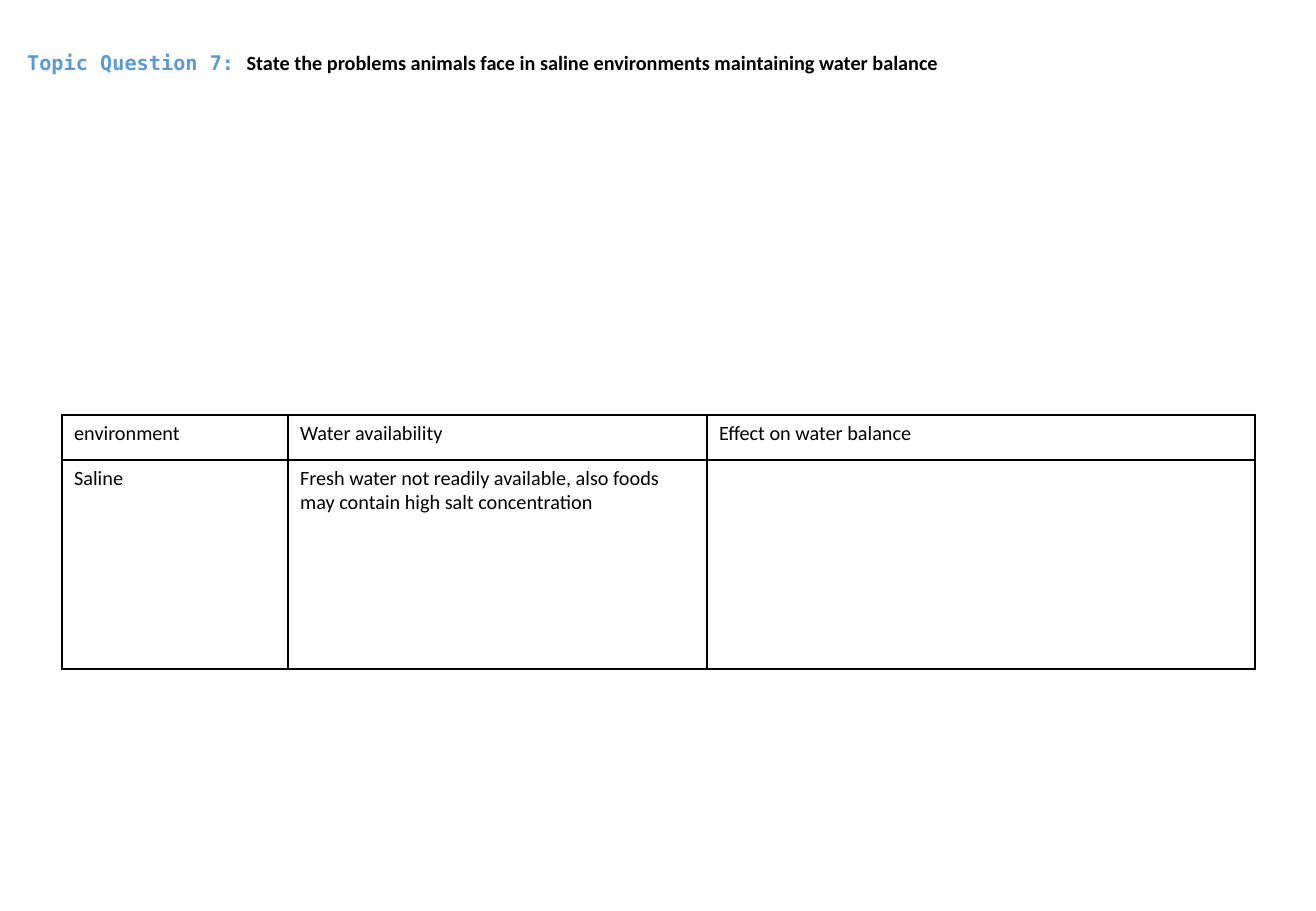
from lxml.etree import SubElement
from pptx import Presentation
from pptx.dml.color import RGBColor
from pptx.enum.text import MSO_ANCHOR, MSO_AUTO_SIZE, PP_ALIGN
from pptx.oxml.ns import qn
from pptx.util import Pt

PX = 914400 / 121.5
THEME = {
    "text": "000000",
    "accent": "5B9BD5",
    "border": "000000",
    "body_font": "Calibri",
    "label_font": "DejaVu Sans Mono",
    "size": Pt(12),
    "border_width": Pt(1),
}


def px(length):
    return round(length * PX)


def style_run(run, font_name, color, bold=False):
    run.font.name = font_name
    run.font.size = THEME["size"]
    run.font.bold = bold
    run.font.color.rgb = RGBColor.from_string(color)


presentation = Presentation()
presentation.slide_width = px(1316)
presentation.slide_height = px(911)
slide = presentation.slides.add_slide(presentation.slide_layouts[5])

# Question
title = slide.shapes.title
title.left, title.top, title.width, title.height = px(15), px(17), px(1044), px(91)
title_frame = title.text_frame
title_frame.word_wrap = True
title_frame.auto_size = MSO_AUTO_SIZE.NONE
title_frame.vertical_anchor = MSO_ANCHOR.MIDDLE
paragraph = title_frame.paragraphs[0]
paragraph.alignment = PP_ALIGN.LEFT
title_parts = [
    ("Topic Question 7: ", THEME["label_font"], THEME["accent"]),
    ("State the problems animals face in saline environments maintaining water balance",
     THEME["body_font"], THEME["text"]),
]
for text, font_name, color in title_parts:
    run = paragraph.add_run()
    run.text = text
    style_run(run, font_name, color, bold=True)

# Water balance table
column_widths = [226, 419, 548]
row_heights = [45, 209]
cell_texts = [
    ["environment", "Water availability", "Effect on water balance"],
    ["Saline",
     "Fresh water not readily available, also foods may contain high salt concentration",
     ""],
]
table = slide.shapes.add_table(
    len(row_heights), len(column_widths), px(62), px(415),
    px(sum(column_widths)), px(sum(row_heights))).table
table.first_row = False
table.horz_banding = False
for column, width in zip(table.columns, column_widths):
    column.width = px(width)

for row, height, texts in zip(table.rows, row_heights, cell_texts):
    row.height = px(height)
    for cell, text in zip(row.cells, texts):
        cell.text_frame.text = text
        for run in cell.text_frame.paragraphs[0].runs:
            style_run(run, THEME["body_font"], THEME["text"])
        properties = cell._tc.get_or_add_tcPr()
        for side in ("a:lnL", "a:lnR", "a:lnT", "a:lnB"):
            line = SubElement(properties, qn(side), w=str(THEME["border_width"]))
            fill = SubElement(line, qn("a:solidFill"))
            SubElement(fill, qn("a:srgbClr"), val=THEME["border"])
        cell.fill.background()

presentation.save("out.pptx")
